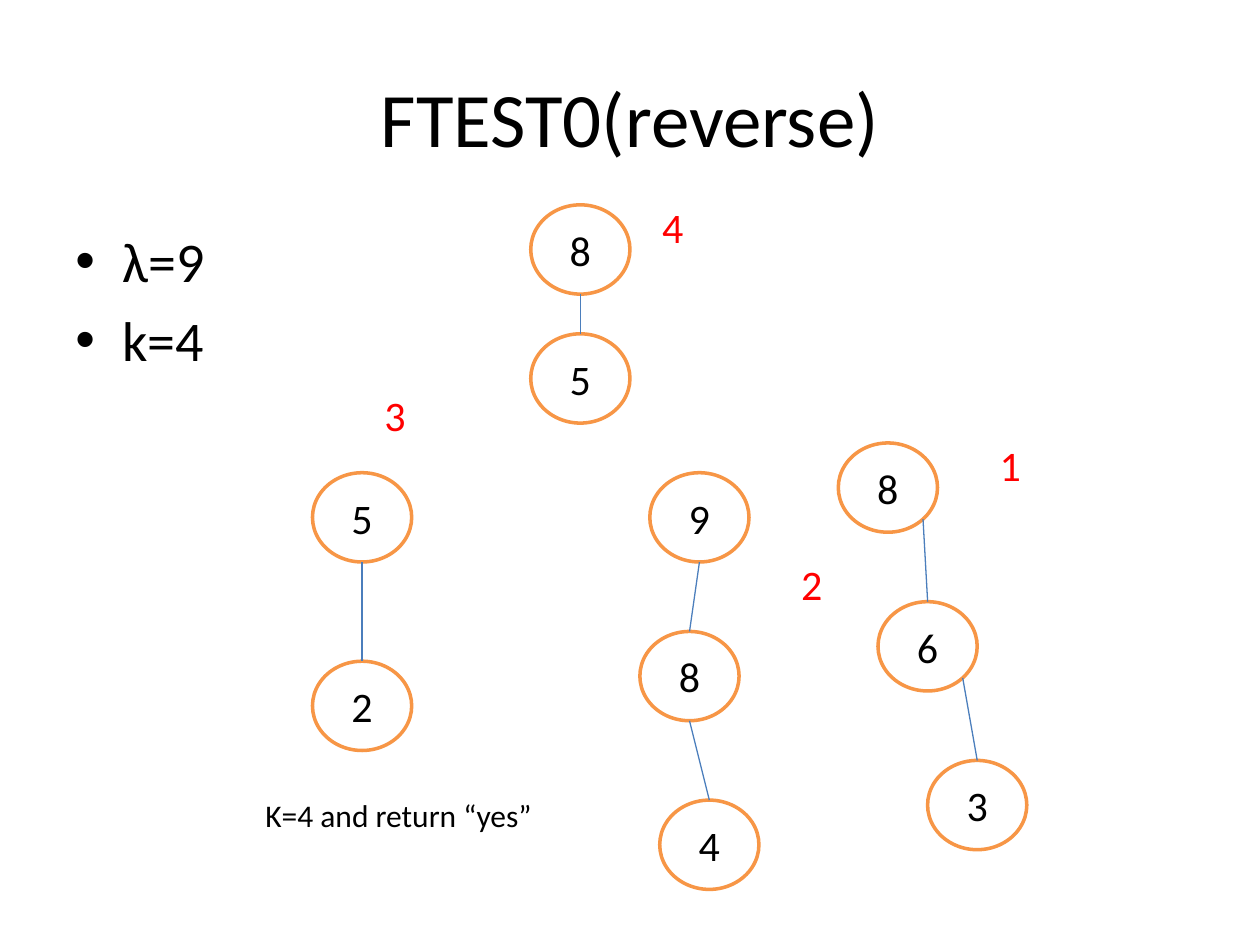
from math import sqrt

from lxml import etree
from pptx import Presentation
from pptx.dml.color import RGBColor
from pptx.enum.shapes import MSO_CONNECTOR, MSO_SHAPE
from pptx.enum.text import MSO_ANCHOR, PP_ALIGN
from pptx.oxml.ns import qn
from pptx.util import Cm, Pt

ELLIPSE = MSO_SHAPE.OVAL
STRAIGHT = MSO_CONNECTOR.STRAIGHT
MIDDLE, TOP = MSO_ANCHOR.MIDDLE, MSO_ANCHOR.TOP
CENTER, LEFT = PP_ALIGN.CENTER, PP_ALIGN.LEFT
BLACK, RED, WHITE, ORANGE, BLUE = "000000", "FF0000", "FFFFFF", "F79646", "4B7EBC"
NODE_WIDTH, NODE_HEIGHT = 2, 1.8


def color(hex_code):
    return RGBColor.from_string(hex_code)


def write(shape, lines, size, hex_code=BLACK, align=LEFT, anchor=TOP, wrap=True):
    """Fill a shape with one paragraph per line, all in the same style."""
    frame = shape.text_frame
    frame.word_wrap = wrap
    frame.vertical_anchor = anchor
    frame.text = "\n".join(lines)
    for para in frame.paragraphs:
        para.alignment = align
        para.font.name = "Calibri"
        para.font.size = Pt(size)
        para.font.color.rgb = color(hex_code)
    return frame


deck = Presentation()
deck.slide_width, deck.slide_height = Cm(25.4), Cm(19.05)
page = deck.slides.add_slide(deck.slide_layouts[6])

title = page.shapes.add_textbox(Cm(1.27), Cm(0.76), Cm(22.86), Cm(3.18))
write(title, ["FTEST0(reverse)"], 44, align=CENTER, anchor=MIDDLE)

parameters = page.shapes.add_textbox(Cm(1.27), Cm(4.45), Cm(22.86), Cm(12.57))
for para in write(parameters, ["λ=9", "k=4"], 32).paragraphs:
    para.space_before = Pt(6.4)
    properties = para._p.get_or_add_pPr()
    properties.set("marL", str(Cm(0.95)))
    properties.set("indent", str(-Cm(0.95)))
    etree.SubElement(properties, qn("a:buFont")).set("typeface", "Arial")
    etree.SubElement(properties, qn("a:buChar")).set("char", "•")
    # Bullet elements belong before the default run properties
    properties.append(properties.find(qn("a:defRPr")))

# Each chain: nodes from top to bottom (value, left, top),
# and whether its lines leave from the lower right of a node
chains = [
    ([("8", 10.7, 4.13), ("5", 10.7, 6.73)], False),
    ([("5", 6.3, 9.53), ("2", 6.3, 13.33)], False),
    ([("9", 13.1, 9.53), ("8", 12.9, 12.73), ("4", 13.3, 16.13)], False),
    ([("8", 16.9, 8.93), ("6", 17.7, 12.13), ("3", 18.7, 15.33)], True),
]
for nodes, from_lower_right in chains:
    for value, left, top in nodes:
        node = page.shapes.add_shape(
            ELLIPSE, Cm(left), Cm(top), Cm(NODE_WIDTH), Cm(NODE_HEIGHT))
        node.shadow.inherit = False
        node.fill.solid()
        node.fill.fore_color.rgb = color(WHITE)
        node.line.color.rgb = color(ORANGE)
        node.line.width = Pt(2)
        write(node, [value], 24, align=CENTER, anchor=MIDDLE)

    # Start point as a share of the node's width and height
    diagonal = 0.5 + sqrt(0.5) / 2
    share_x, share_y = (diagonal, diagonal) if from_lower_right else (0.5, 1)
    for (_, left, top), (_, next_left, next_top) in zip(nodes, nodes[1:]):
        edge = page.shapes.add_connector(
            STRAIGHT,
            Cm(left + share_x * NODE_WIDTH), Cm(top + share_y * NODE_HEIGHT),
            Cm(next_left + NODE_WIDTH / 2), Cm(next_top))
        edge.line.color.rgb = color(BLUE)
        edge.line.width = Pt(0.75)
        etree.SubElement(edge._element.spPr, qn("a:effectLst"))

steps = [("1", 19.9, 8.73), ("2", 15.9, 11.13), ("3", 7.5, 7.73), ("4", 13.1, 3.93)]
for number, left, top in steps:
    label = page.shapes.add_textbox(Cm(left), Cm(top), Cm(1), Cm(1.27))
    write(label, [number], 24, RED)

result = page.shapes.add_textbox(Cm(5.1), Cm(15.93), Cm(5.94), Cm(1.02))
write(result, ["K=4 and return “yes”"], 18, wrap=False)

deck.save("out.pptx")
